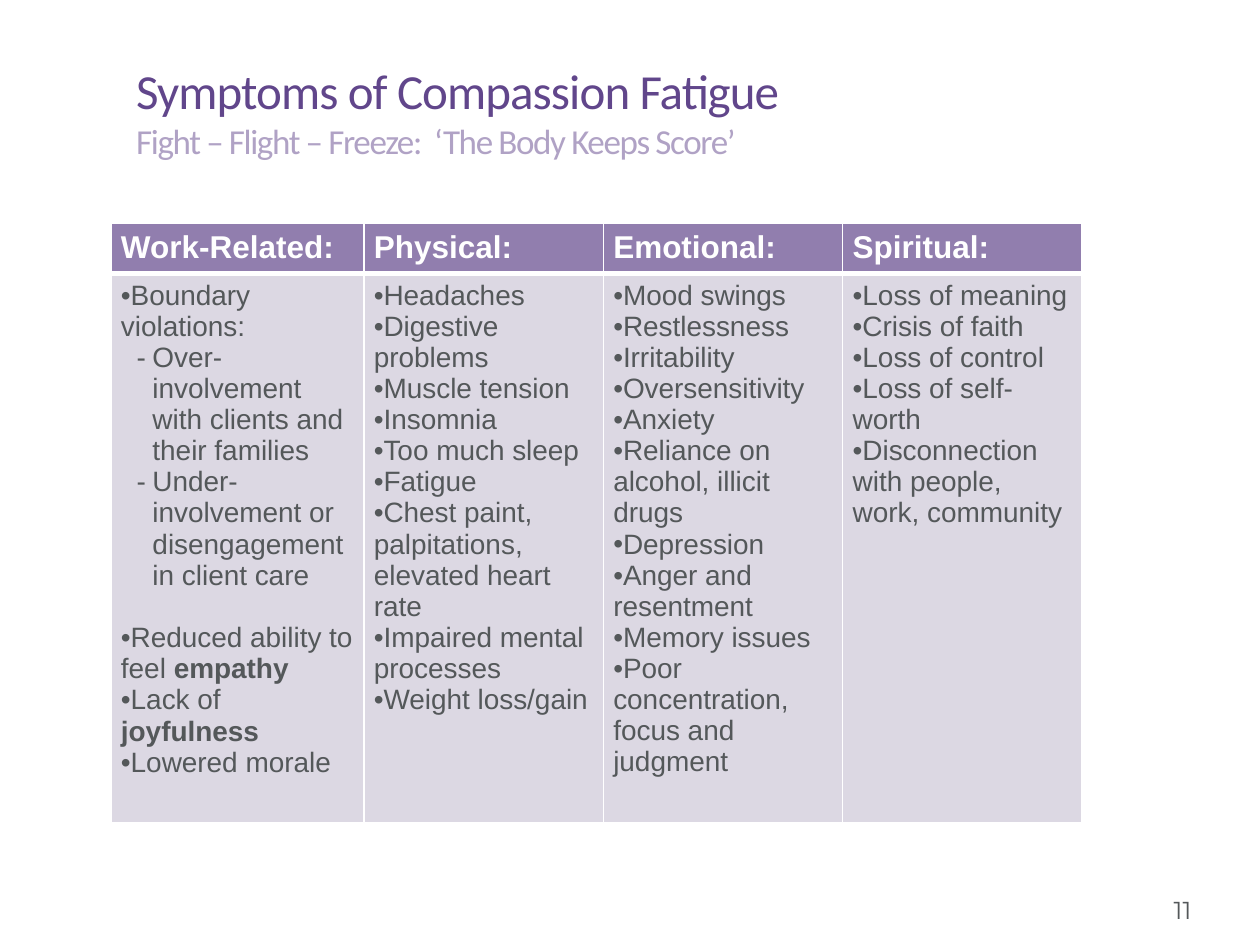
from pptx import Presentation
from pptx.dml.color import RGBColor
from pptx.enum.text import MSO_ANCHOR as Anchor, MSO_AUTO_SIZE as Auto, PP_ALIGN as Align
from pptx.oxml.ns import qn
from pptx.util import Pt
from lxml.etree import SubElement as Sub

PLUM = RGBColor(0x61, 0x46, 0x8B)
LILAC = RGBColor(0xB0, 0xA2, 0xC5)
MAUVE = RGBColor(0x91, 0x7E, 0xAE)
PALE = RGBColor(0xDC, 0xD8, 0xE3)
GREY = RGBColor(0x54, 0x58, 0x5A)
WHITE = RGBColor(0xFF, 0xFF, 0xFF)

TITLE = {"size": Pt(28), "name": "Calibri", "bold": False}
LEAD = {"size": Pt(20), "name": "Calibri", "bold": False}
HEAD = {"size": Pt(18), "name": "Arial", "bold": True}
ITEM = {"size": Pt(16), "name": "Arial", "bold": False}
PAGE = {"size": Pt(14), "name": "Montserrat"}

# "- " opens a sub-item, "+ " an item set apart; asterisks mark bold words.
SIGNS = {
    "Work-Related:": [
        "Boundary violations:",
        "- Over-involvement with clients and their families",
        "- Under-involvement or disengagement in client care",
        "+ Reduced ability to feel *empathy*",
        "Lack of *joyfulness*",
        "Lowered morale",
    ],
    "Physical:": [
        "Headaches", "Digestive problems", "Muscle tension", "Insomnia",
        "Too much sleep", "Fatigue",
        "Chest paint, palpitations, elevated heart rate",
        "Impaired mental processes", "Weight loss/gain",
    ],
    "Emotional:": [
        "Mood swings", "Restlessness", "Irritability", "Oversensitivity",
        "Anxiety", "Reliance on alcohol, illicit drugs", "Depression",
        "Anger and resentment", "Memory issues",
        "Poor concentration, focus and judgment",
    ],
    "Spiritual:": [
        "Loss of meaning", "Crisis of faith", "Loss of control",
        "Loss of self-worth", "Disconnection with people, work, community",
    ],
}


def style(font, look, color):
    for key, value in look.items():
        setattr(font, key, value)
    font.color.rgb = color


def place(shape, box):
    for key, value in zip(("left", "top", "width", "height"), box):
        setattr(shape, key, Pt(value))


def inset(frame, right, bottom):
    frame.margin_left = frame.margin_top = 0
    frame.margin_right, frame.margin_bottom = Pt(right), Pt(bottom)


def indent(para, left, first, mark=None):
    """Set the hanging indent and the bullet, or none."""
    props = para._p.get_or_add_pPr()
    props.set("marL", str(Pt(left)))
    props.set("indent", str(Pt(first)))
    if mark:
        Sub(props, qn("a:buFont"), typeface="Arial")
        Sub(props, qn("a:buChar"), char=mark)
    else:
        Sub(props, qn("a:buNone"))


def heading(shape, box, text, look, color, track, anchor):
    place(shape, box)
    frame = shape.text_frame
    inset(frame, 7.2, 3.6)
    frame.auto_size, frame.vertical_anchor = Auto.NONE, anchor
    para = frame.paragraphs[0]
    para.alignment, para.line_spacing, para.space_before = Align.LEFT, 0.85, Pt(0)
    indent(para, 0, 0)
    run = para.add_run()
    run.text = text
    style(run.font, look, color)
    run._r.get_or_add_rPr().set("spc", str(track))


def edge(cell, **widths):
    """Draw white borders on a cell, in points by side."""
    props = cell._tc.get_or_add_tcPr()
    for side in "LRTB":
        line = Sub(props, qn("a:ln" + side), w=str(Pt(widths.get(side, 1))))
        Sub(Sub(line, qn("a:solidFill")), qn("a:srgbClr"), val=str(WHITE))


def paint(cell, color):
    cell.fill.solid()
    cell.fill.fore_color.rgb = color
    cell.margin_left = cell.margin_right = Pt(5.75)
    cell.margin_top = cell.margin_bottom = Pt(3.6)


def write(para, text):
    if text.startswith("- "):
        text = text[2:]
        indent(para, 18, -9, "-")
    else:
        if text.startswith("+ "):
            text = text[2:]
            para.space_before = Pt(18)
        indent(para, 0, 0, "•")
    for i, part in enumerate(text.split("*")):
        if part:
            run = para.add_run()
            run.text = part
            style(run.font, {**ITEM, "bold": i % 2 == 1}, GREY)


def grid(slide, box, first, head):
    left, top, width, height = box
    count = len(SIGNS)
    table = slide.shapes.add_table(2, count, *map(Pt, box)).table
    table.horz_banding = False
    table.rows[0].height, table.rows[1].height = Pt(head), Pt(height - head)
    rest = (width - first) / (count - 1)
    for col, (name, items) in enumerate(SIGNS.items()):
        table.columns[col].width = Pt(rest if col else first)
        top_cell, cell = table.cell(0, col), table.cell(1, col)
        edge(top_cell, B=3)
        edge(cell, T=3)
        paint(top_cell, MAUVE)
        paint(cell, PALE)
        run = top_cell.text_frame.paragraphs[0].add_run()
        run.text = name
        style(run.font, HEAD, WHITE)
        frame = cell.text_frame
        for i, item in enumerate(items):
            write(frame.add_paragraph() if i else frame.paragraphs[0], item)


def number(slide, box, text):
    frame = slide.shapes.add_textbox(*map(Pt, box)).text_frame
    inset(frame, 0, 0)
    frame.word_wrap, frame.vertical_anchor = False, Anchor.BOTTOM
    para = frame.paragraphs[0]
    para.alignment = Align.RIGHT
    run = para.add_run()
    run.text = text
    style(run.font, PAGE, GREY)


def main():
    deck = Presentation()
    deck.slide_width, deck.slide_height = Pt(720), Pt(540)
    slide = deck.slides.add_slide(deck.slide_layouts[1])
    heading(slide.shapes.title, (77.8, 12.2, 607.7, 59.8),
            "Symptoms of Compassion Fatigue", TITLE, PLUM, -50, Anchor.BOTTOM)
    heading(slide.placeholders[1], (77.8, 72, 540, 36),
            "Fight – Flight – Freeze:  ‘The Body Keeps Score’",
            LEAD, LILAC, -80, Anchor.TOP)
    grid(slide, (63.4, 127.6, 555, 342.7), 144.5, 28.8)
    number(slide, (653.8, 510.5, 27, 18), "11")
    deck.save("out.pptx")


if __name__ == "__main__":
    main()
